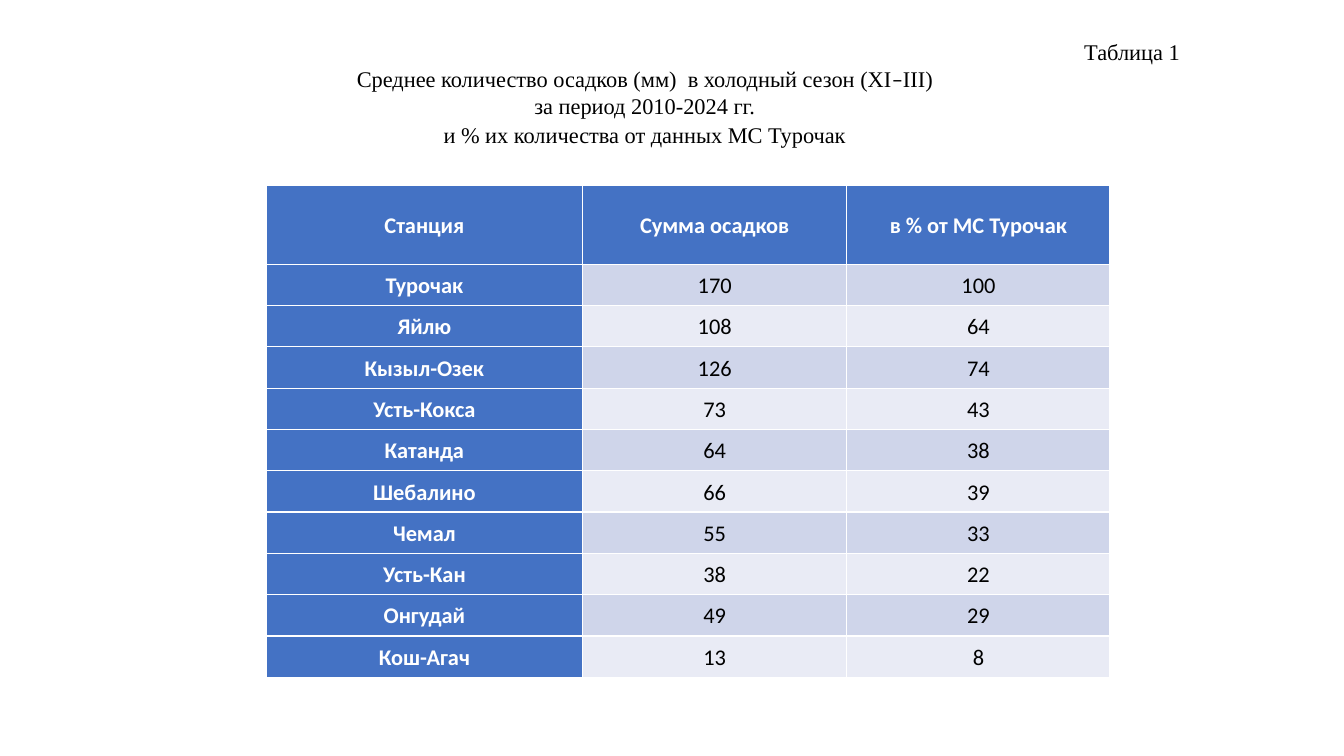
from dataclasses import dataclass

from pptx import Presentation
from pptx.dml.color import RGBColor
from pptx.enum.text import MSO_ANCHOR as Anchor, PP_ALIGN as Align
from pptx.util import Inches, Pt

SLIDE_W, SLIDE_H = Inches(13.33), Inches(7.5)


@dataclass(frozen=True)
class Theme:
    header: str = "4472C4"
    bands: tuple = ("CFD5EA", "E9EBF5")
    light: str = "FFFFFF"
    dark: str = "000000"
    serif: str = "Times New Roman"
    sans: str = "Calibri"
    size: int = 16


@dataclass(frozen=True)
class Box:
    """Region given in shares of the slide's size."""
    left: float
    top: float
    width: float
    height: float

    def emu(self):
        return (round(self.left * SLIDE_W), round(self.top * SLIDE_H),
                round(self.width * SLIDE_W), round(self.height * SLIDE_H))


THEME = Theme()
HEADING_BOX = Box(0.5 / 13.33, 0.33 / 7.5, 11.3 / 13.33, 1.2 / 7.5)
TABLE_BOX = Box(2.64 / 13.33, 1.84 / 7.5, 8.37 / 13.33, 4.88 / 7.5)
COLUMN_SHARES = (0.375, 0.313, 0.312)
HEADER_SHARE = 0.16
FIRST_LINE_INDENT = Inches(0.49)

# Alignment, space before in points, and (text, font) runs of each line
HEADING = [
    (Align.RIGHT, 0, [("Таблица 1", THEME.serif)]),
    (Align.CENTER, 0, [
        ("Среднее количество осадков (мм)  в холодный сезон (XI", THEME.serif),
        ("–", THEME.sans),
        ("III)", THEME.serif),
    ]),
    (Align.CENTER, 0, [("за период 2010-2024 гг.", THEME.serif)]),
    (Align.CENTER, 2, [("и % их количества от данных МС Турочак", THEME.serif)]),
]

PRECIPITATION = [
    ("Станция", "Сумма осадков", "в % от МС Турочак"),
    ("Турочак", 170, 100),
    ("Яйлю", 108, 64),
    ("Кызыл-Озек", 126, 74),
    ("Усть-Кокса", 73, 43),
    ("Катанда", 64, 38),
    ("Шебалино", 66, 39),
    ("Чемал", 55, 33),
    ("Усть-Кан", 38, 22),
    ("Онгудай", 49, 29),
    ("Кош-Агач", 13, 8),
]


def set_attributes(target, values):
    for name, value in values.items():
        setattr(target, name, value)


def add_run(line, text, font, color, bold=False):
    run = line.add_run()
    run.text = text
    set_attributes(run.font, {"name": font, "size": Pt(THEME.size), "bold": bold})
    run.font.color.rgb = RGBColor.from_string(color)


def add_heading(slide, box):
    frame = slide.shapes.add_textbox(*box.emu()).text_frame
    set_attributes(frame, {"word_wrap": True, "vertical_anchor": Anchor.TOP})
    for index, (align, before, runs) in enumerate(HEADING):
        line = frame.add_paragraph() if index else frame.paragraphs[0]
        set_attributes(line, {"alignment": align, "space_before": Pt(before)})
        line._p.get_or_add_pPr().set("indent", str(FIRST_LINE_INDENT))
        for text, font in runs:
            add_run(line, text, font, THEME.dark)


def fill_cell(cell, value, fill, color, bold):
    set_attributes(cell, {
        "vertical_anchor": Anchor.MIDDLE,
        "margin_left": Inches(0.07), "margin_right": Inches(0.07),
        "margin_top": 0, "margin_bottom": 0,
    })
    cell.fill.solid()
    cell.fill.fore_color.rgb = RGBColor.from_string(fill)
    line = cell.text_frame.paragraphs[0]
    set_attributes(line, {"alignment": Align.CENTER, "line_spacing": 1.07,
                          "space_after": Pt(8)})
    add_run(line, str(value), THEME.sans, color, bold)


def add_precipitation_table(slide, box):
    left, top, width, height = box.emu()
    stations = len(PRECIPITATION) - 1
    table = slide.shapes.add_table(stations + 1, len(COLUMN_SHARES),
                                   left, top, width, height).table
    table.first_col = True
    for column, share in zip(table.columns, COLUMN_SHARES):
        column.width = round(width * share)
    for index, row in enumerate(table.rows):
        share = (1 - HEADER_SHARE) / stations if index else HEADER_SHARE
        row.height = round(height * share)
        for position, value in enumerate(PRECIPITATION[index]):
            is_label = index == 0 or position == 0
            fill = THEME.header if is_label else THEME.bands[(index - 1) % 2]
            color = THEME.light if is_label else THEME.dark
            fill_cell(row.cells[position], value, fill, color, is_label)


def main():
    deck = Presentation()
    set_attributes(deck, {"slide_width": SLIDE_W, "slide_height": SLIDE_H})
    slide = deck.slides.add_slide(deck.slide_layouts[6])
    add_precipitation_table(slide, TABLE_BOX)
    add_heading(slide, HEADING_BOX)
    deck.save("out.pptx")


if __name__ == "__main__":
    main()
